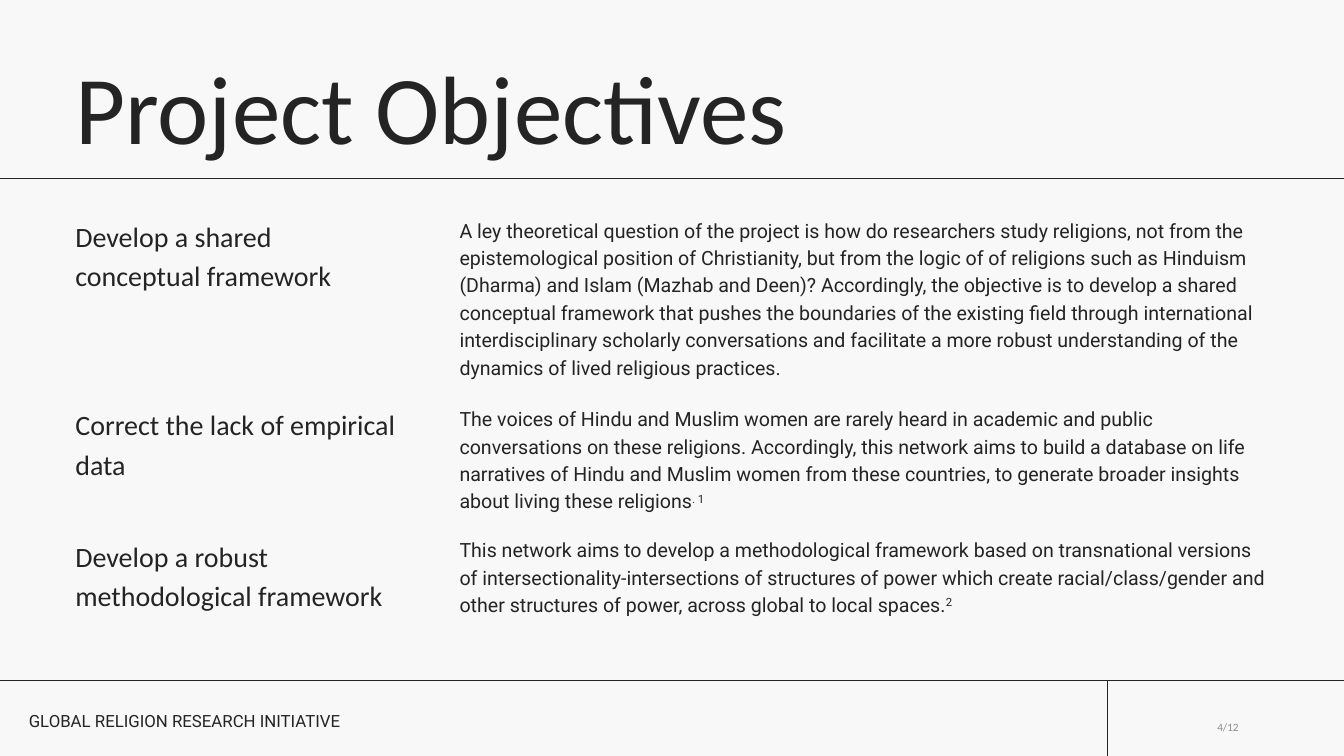
"""Build the Project Objectives slide."""
from lxml import etree
from pptx import Presentation
from pptx.dml.color import RGBColor
from pptx.enum.shapes import MSO_CONNECTOR
from pptx.enum.text import MSO_ANCHOR, MSO_AUTO_SIZE, PP_ALIGN
from pptx.oxml.ns import qn
from pptx.util import Cm, Pt

LEFT, CENTER, JUSTIFY = PP_ALIGN.LEFT, PP_ALIGN.CENTER, PP_ALIGN.JUSTIFY
TOP, MIDDLE = MSO_ANCHOR.TOP, MSO_ANCHOR.MIDDLE
STRAIGHT = MSO_CONNECTOR.STRAIGHT
NO_FIT = MSO_AUTO_SIZE.NONE

COLORS = {"background": "F8F8F8", "ink": "242424", "muted": "8C8C8C"}
HEAD_FONT, BODY_FONT = "Calibri", "Roboto"
SLIDE_W, SLIDE_H = 50.8, 28.58
MARGIN, BODY_LEFT = 2.85, 17.37
HEAD_W, BODY_W = 12.27, 30.56
TITLE_RULE_Y, FOOTER_Y, FOOTER_SPLIT_X = 6.74, 25.72, 41.87

OBJECTIVES = [
    (8.08, 2.9, 6.17, "Develop a shared conceptual framework",
     "A ley theoretical question of the project is how do researchers study "
     "religions, not from the epistemological position of Christianity, but "
     "from the logic of of religions such as Hinduism (Dharma) and Islam "
     "(Mazhab and Deen)? Accordingly, the objective is to develop a shared "
     "conceptual framework that pushes the boundaries of the existing field "
     "through international interdisciplinary scholarly conversations and "
     "facilitate a more robust understanding of the dynamics of lived "
     "religious practices.", ""),
    (15.21, 2.9, 5.13, "Correct the lack of empirical data",
     "The voices of Hindu and Muslim women are rarely heard in academic and "
     "public conversations on these religions. Accordingly, this network aims "
     "to build a database on life narratives of Hindu and Muslim women from "
     "these countries, to generate broader insights about living these "
     "religions", ". 1"),
    (20.17, 4.37, 3.02, "Develop a robust methodological framework",
     "This network aims to develop a methodological framework based on "
     "transnational versions of intersectionality-intersections of structures "
     "of power which create racial/class/gender and other structures of power, "
     "across global to local spaces.", "2"),
]


def add_run(p, text, font, size, color="ink", superscript=False):
    r = p.add_run()
    r.text = text
    r.font.name = font
    r.font.size = Pt(size)
    r.font.color.rgb = RGBColor.from_string(COLORS[color])
    if superscript:
        r._r.get_or_add_rPr().set("baseline", "30000")


def format_frame(sp, align=LEFT, anchor=TOP, spacing=None, inset=True):
    tf = sp.text_frame
    tf.word_wrap = True
    tf.auto_size = NO_FIT
    tf.vertical_anchor = anchor
    if not inset:
        tf.margin_left = tf.margin_right = tf.margin_top = tf.margin_bottom = 0
    p = tf.paragraphs[0]
    p.alignment = align
    if spacing:
        p.line_spacing = Pt(spacing)
    return p


def add_text(s, x, y, w, h, **layout):
    sp = s.shapes.add_textbox(Cm(x), Cm(y), Cm(w), Cm(h))
    return format_frame(sp, **layout)


def add_title(s, text):
    sp = s.shapes.title
    sp.left, sp.top, sp.width, sp.height = Cm(MARGIN), Cm(1.78), Cm(39), Cm(4.37)
    p = format_frame(sp, spacing=124.8, inset=False)
    add_run(p, text, HEAD_FONT, 104)


def add_rule(s, x1, y1, x2, y2):
    line = s.shapes.add_connector(STRAIGHT, Cm(x1), Cm(y1), Cm(x2), Cm(y2))
    line.line.color.rgb = RGBColor.from_string(COLORS["ink"])
    line.line.width = Pt(0.75)
    etree.SubElement(line._element.spPr, qn("a:effectLst"))


def add_objective(s, top, head_h, body_h, heading, body, note):
    p = add_text(s, MARGIN, top, HEAD_W, head_h, spacing=42, inset=False)
    add_run(p, heading, HEAD_FONT, 30)
    p = add_text(s, BODY_LEFT, top + 0.03, BODY_W, body_h,
                 spacing=29.4, inset=False)
    add_run(p, body, BODY_FONT, 21)
    if note:
        add_run(p, note, BODY_FONT, 21, superscript=True)


def add_footer(s, label, page):
    add_rule(s, 0, FOOTER_Y, SLIDE_W, FOOTER_Y)
    add_rule(s, FOOTER_SPLIT_X, FOOTER_Y, FOOTER_SPLIT_X, SLIDE_H)
    p = add_text(s, 0.84, 26.72, 13.59, 0.99, align=JUSTIFY, spacing=22.4)
    add_run(p, label, BODY_FONT, 18)
    p = add_text(s, 42.39, 26.98, 8.05, 1.02, align=CENTER, anchor=MIDDLE)
    add_run(p, page, HEAD_FONT, 12, "muted")


def main():
    prs = Presentation()
    prs.slide_width, prs.slide_height = Cm(SLIDE_W), Cm(SLIDE_H)
    s = prs.slides.add_slide(prs.slide_layouts[5])
    s.background.fill.solid()
    s.background.fill.fore_color.rgb = RGBColor.from_string(COLORS["background"])

    add_title(s, "Project Objectives")
    add_rule(s, 0, TITLE_RULE_Y, SLIDE_W, TITLE_RULE_Y)
    for objective in OBJECTIVES:
        add_objective(s, *objective)
    add_footer(s, "GLOBAL RELIGION RESEARCH INITIATIVE", "4/12")
    prs.save("out.pptx")


if __name__ == "__main__":
    main()
